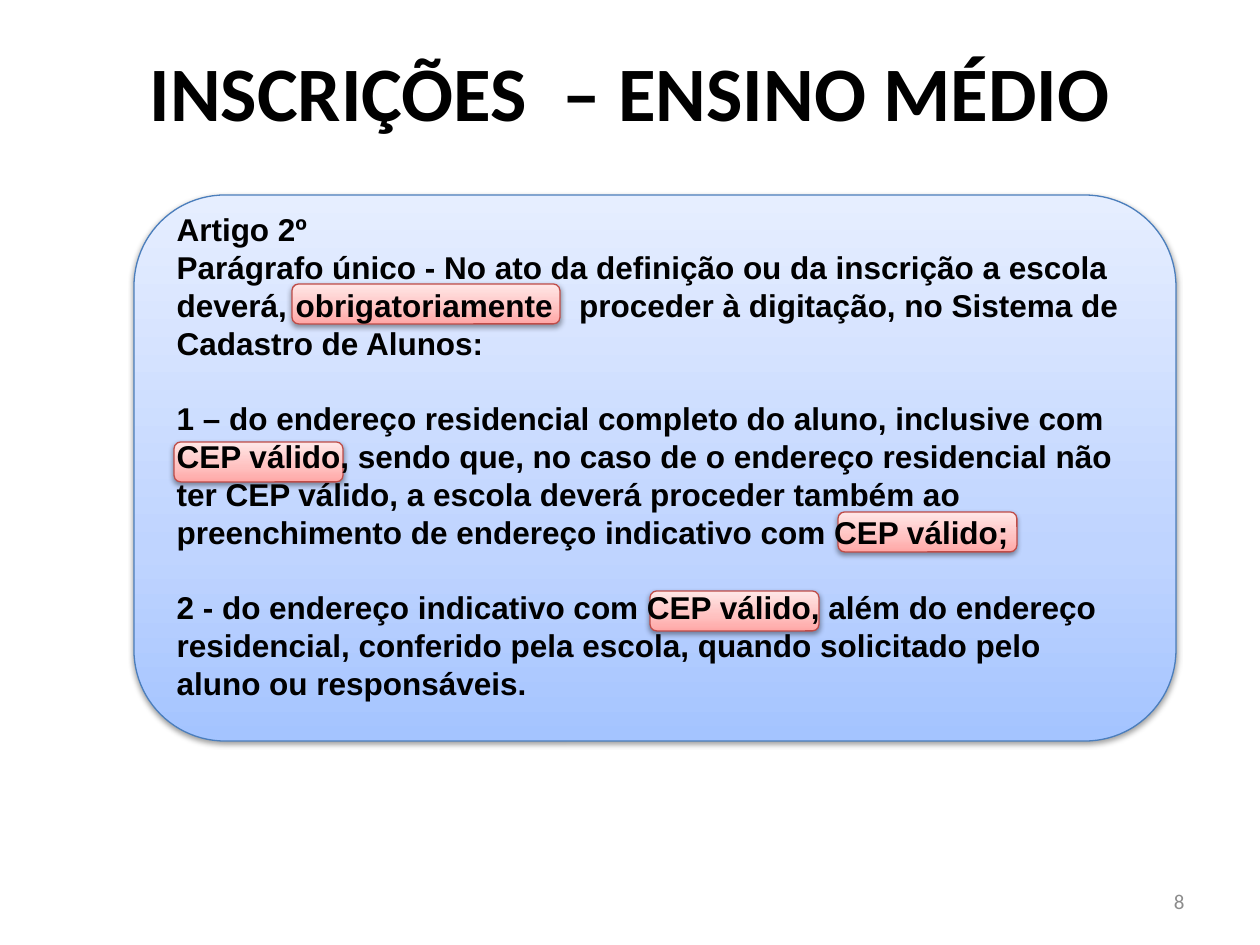
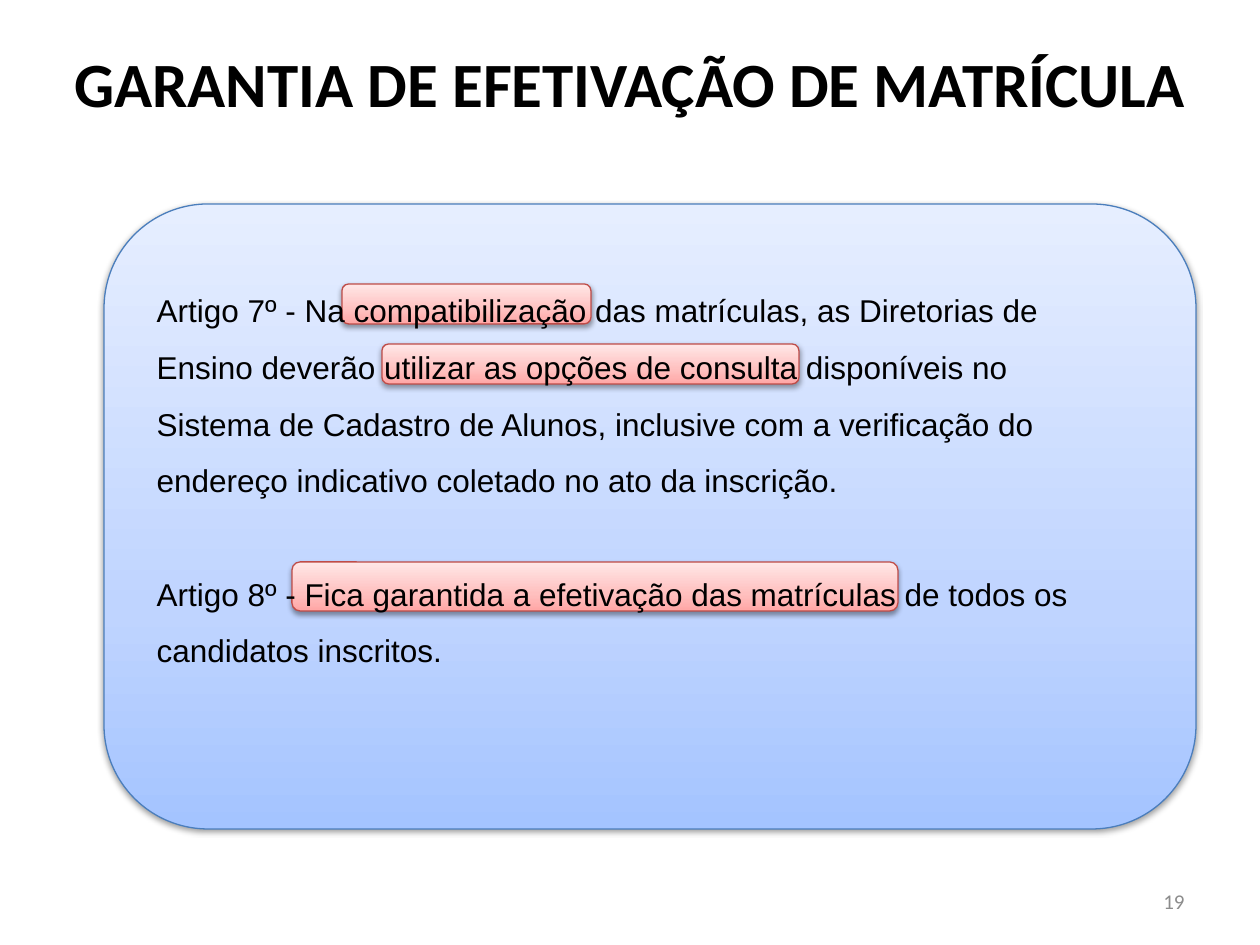
from copy import deepcopy
from dataclasses import dataclass

from lxml import etree
from pptx import Presentation
from pptx import util as u
from pptx.dml.color import RGBColor
from pptx.enum import shapes, text
from pptx.oxml.ns import qn

PX = 914400 / 126  # EMU in one px


@dataclass(frozen=True)
class Theme:
    ink: str = "000000"
    grey: str = "8C8C8C"
    blue: tuple = ("A4C4FF", "BFD4FF", "E6EEFF")
    blue_edge: str = "4B7EBC"
    red: tuple = ("FFA6A5", "FFC0BF", "FFE7E7")
    red_edge: str = "BF4C48"
    stops: tuple = (0, 0.35, 1)
    head: str = "Calibri"
    text: str = "Arial"
    body: int = 18
    foot: int = 12
    wide: int = 10  # extra points after a wide space


WIDE = object()  # stands for a widened space between words


class Deck:
    def __init__(self, theme):
        self.theme = theme
        self.prs = Presentation()
        self.prs.slide_width = u.Emu(round(1260 * PX))
        self.prs.slide_height = u.Emu(round(945 * PX))
        self.slide = None

    def emu(self, box):
        return [u.Emu(round(n * PX)) for n in box]

    def open(self):
        self.slide = self.prs.slides.add_slide(self.prs.slide_layouts[1])

    # Shapes
    def block(self, box, tones, edge):
        shape = self.slide.shapes.add_shape(
            shapes.MSO_SHAPE.ROUNDED_RECTANGLE, *self.emu(box))
        shape.fill.gradient()
        stops = shape._element.spPr.find(qn("a:gradFill")).find(qn("a:gsLst"))
        stops.append(deepcopy(stops[-1]))
        for stop, tone, at in zip(shape.fill.gradient_stops, tones, self.theme.stops):
            stop.color.rgb = RGBColor.from_string(tone)
            stop.position = at
        shape.fill.gradient_angle = 90
        shape.line.color.rgb = RGBColor.from_string(edge)
        shape.line.width = u.Pt(0.75)
        self.shade(shape)

    def shade(self, shape):
        shape.shadow.inherit = False
        glow = etree.SubElement(
            shape._element.spPr.find(qn("a:effectLst")), qn("a:outerShdw"),
            blurRad=str(u.Pt(3.1)), dist=str(u.Pt(1.6)), dir="5400000", rotWithShape="0")
        tint = etree.SubElement(glow, qn("a:srgbClr"), val="000000")
        etree.SubElement(tint, qn("a:alpha"), val="38000")

    def panel(self, box):
        self.block(box, self.theme.blue, self.theme.blue_edge)

    def mark(self, box):
        self.block(box, self.theme.red, self.theme.red_edge)

    # Text
    def place(self, shape, box, anchor):
        shape.left, shape.top, shape.width, shape.height = self.emu(box)
        frame = shape.text_frame
        frame.word_wrap = True
        frame.auto_size = text.MSO_AUTO_SIZE.NONE
        frame.vertical_anchor = anchor
        return frame

    def runs(self, para, parts, face, size, color, bold=False):
        for part in parts:
            run = para.add_run()
            run.text = " " if part is WIDE else part
            font = run.font
            font.name, font.size, font.bold = face, u.Pt(size), bold
            font.color.rgb = RGBColor.from_string(color)
            if part is WIDE:
                run._r.get_or_add_rPr().set("spc", str(self.theme.wide * 100))

    def title(self, parts, size):
        shape = self.slide.shapes.title
        frame = self.place(shape, (0, 38, 1260, 158), text.MSO_ANCHOR.TOP)
        para = frame.paragraphs[0]
        para.alignment = text.PP_ALIGN.CENTER
        self.runs(para, parts, self.theme.head, size, self.theme.ink, True)
        self.raise_up(shape)

    def body(self, box, paras, bold=False, lines=1.0):
        """Each entry of paras is (space before in points, parts)."""
        shape = self.slide.placeholders[1]
        frame = self.place(shape, box, text.MSO_ANCHOR.TOP)
        for i, (gap, parts) in enumerate(paras):
            para = frame.add_paragraph() if i else frame.paragraphs[0]
            props = para._p.get_or_add_pPr()
            props.set("marL", "0")
            props.set("indent", "0")
            etree.SubElement(props, qn("a:buNone"))
            para.alignment = text.PP_ALIGN.LEFT
            para.line_spacing = lines
            para.space_before = u.Pt(gap)
            self.runs(para, parts, self.theme.text, self.theme.body, self.theme.ink, bold)
        self.raise_up(shape)

    def number(self, value):
        shape = self.slide.shapes.add_textbox(0, 0, 0, 0)
        frame = self.place(shape, (903, 876, 294, 50), text.MSO_ANCHOR.MIDDLE)
        para = frame.paragraphs[0]
        para.alignment = text.PP_ALIGN.RIGHT
        self.runs(para, [str(value)], self.theme.head, self.theme.foot, self.theme.grey)

    def raise_up(self, shape):
        self.slide.shapes._spTree.append(shape._element)


def signup(deck):
    deck.open()
    deck.panel((134, 195, 1042, 546))
    for box in ((650, 591, 169, 40), (838, 512, 179, 40),
                (174, 442, 169, 40), (292, 284, 268, 40)):
        deck.mark(box)
    deck.number(8)
    deck.title(["INSCRIÇÕES", WIDE, "– ENSINO MÉDIO"], 44)
    deck.body((164, 204, 973, 509), [
        (0, ["Artigo 2º"]),
        (0, ["Parágrafo único - No ato da definição ou da inscrição a escola "
             "deverá, obrigatoriamente", WIDE, "proceder à digitação, no Sistema "
             "de Cadastro de Alunos:"]),
        (21.6, ["1 – do endereço residencial completo do aluno, inclusive com CEP "
                "válido, sendo que, no caso de o endereço residencial não ter CEP "
                "válido, a escola deverá proceder também ao preenchimento de "
                "endereço indicativo com CEP válido;"]),
        (21.6, ["2 - do endereço indicativo com CEP válido, além do endereço "
                "residencial, conferido pela escola, quando solicitado pelo aluno "
                "ou responsáveis."]),
    ], bold=True)


def enrol(deck):
    deck.open()
    deck.panel((104, 204, 1092, 625))
    for box in ((292, 562, 606, 49), (342, 284, 249, 40), (382, 344, 417, 40)):
        deck.mark(box)
    deck.number(19)
    deck.title(["GARANTIA DE EFETIVAÇÃO DE MATRÍCULA"], 36)
    deck.body((144, 266, 983, 420), [
        (0, ["Artigo 7º - Na compatibilização das matrículas, as Diretorias de "
             "Ensino deverão utilizar as opções de consulta disponíveis no Sistema "
             "de Cadastro de Alunos, inclusive com a verificação do endereço "
             "indicativo coletado no ato da inscrição."]),
        (32.4, ["Artigo 8º - Fica garantida a efetivação das matrículas de todos os "
                "candidatos inscritos."]),
    ], lines=1.5)


def main():
    deck = Deck(Theme())
    signup(deck)
    enrol(deck)
    deck.prs.save("out.pptx")


if __name__ == "__main__":
    main()
